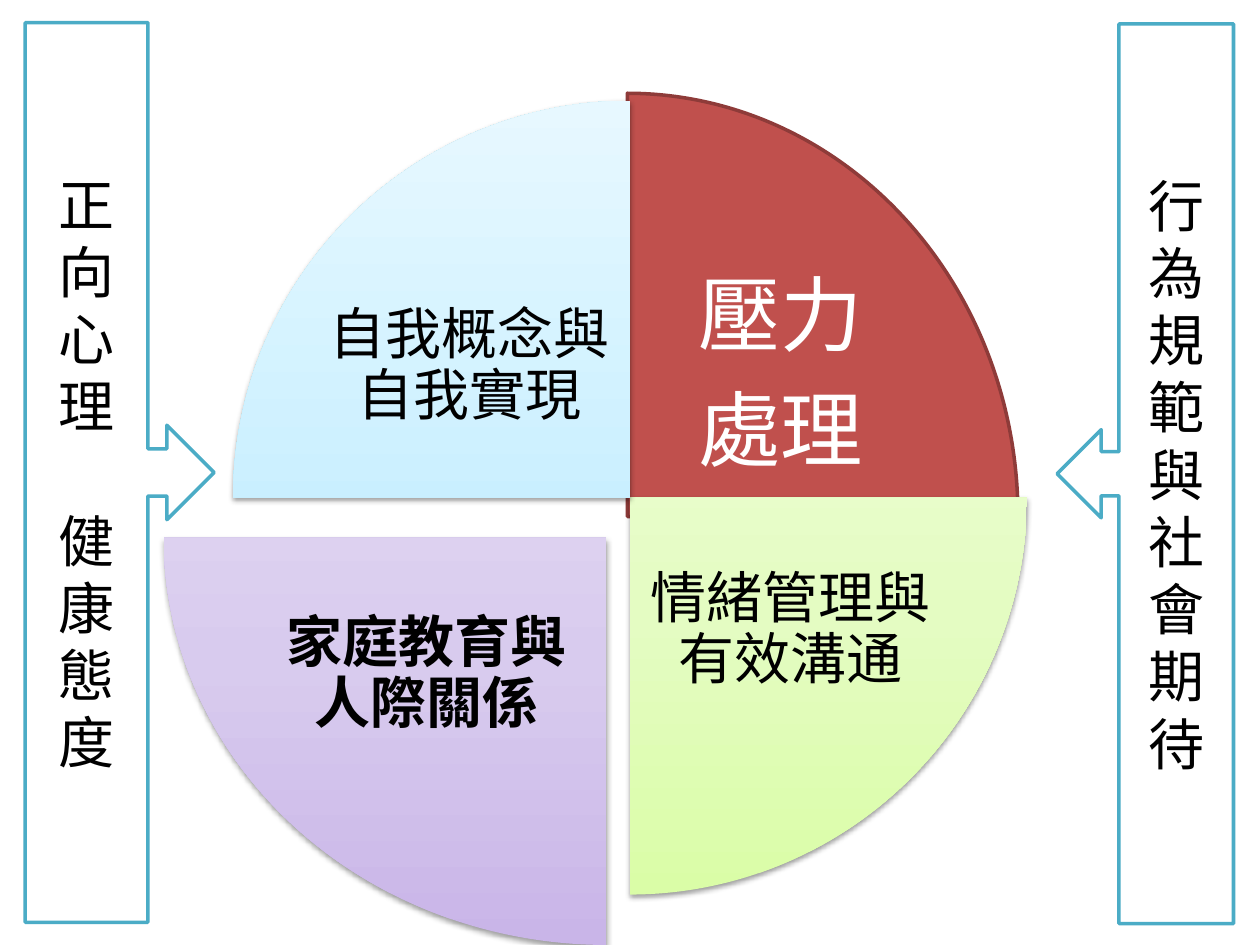
"""Build a slide with four pie quadrants between two arrow callouts."""
from lxml.etree import SubElement
from pptx import Presentation
from pptx.dml.color import RGBColor as RGB
from pptx.enum.shapes import MSO_SHAPE as SHAPE
from pptx.enum.text import MSO_ANCHOR as ANCHOR, PP_ALIGN as ALIGN
from pptx.oxml.ns import qn
from pptx.util import Inches, Pt

FONT = "Noto Sans CJK SC"
BLACK, WHITE = RGB(0, 0, 0), RGB(255, 255, 255)
RED, DARK_RED = RGB(0xC0, 0x50, 0x4D), RGB(0x8E, 0x3B, 0x39)
TEAL = RGB(0x4B, 0xAC, 0xC6)
GREENS = RGB(0xDA, 0xFD, 0xA7), RGB(0xE4, 0xFC, 0xC2), RGB(0xF5, 0xFF, 0xE7)
PURPLES = RGB(0xC9, 0xB5, 0xE8), RGB(0xD8, 0xCB, 0xEE), RGB(0xF0, 0xEA, 0xF9)
BLUES = RGB(0xA7, 0xE6, 0xFF), RGB(0xC1, 0xED, 0xFF), RGB(0xE7, 0xF8, 0xFF)

prs = Presentation()
prs.slide_width, prs.slide_height = Inches(10), Inches(7.5)
COL, ROW = prs.slide_width / 100, prs.slide_height / 75
s = prs.slides.add_slide(prs.slide_layouts[6])


def place(x, y, w, h):
    return int(x * COL), int(y * ROW), int(w * COL), int(h * ROW)


def write(tf, lines, size, pitch, color, bold=None):
    tf.word_wrap = True
    tf.vertical_anchor = ANCHOR.MIDDLE
    tf.text = "\n".join(lines)
    for p in tf.paragraphs:
        p.alignment = ALIGN.CENTER
        p.line_spacing = Pt(pitch)
        for r in p.runs:
            r.font.name, r.font.size, r.font.bold = FONT, Pt(size), bold
            r.font.color.rgb = color
            SubElement(r.font._element, qn("a:ea"), typeface=FONT)


QUADRANTS = [
    ((18.8, 7.4, 62, 67.2), (162, 0), None,
     (50.5, 19.9, 22.9, 20), ["壓力", "處理"], 47, 49, WHITE, None),
    ((18.5, 8, 63, 63), (0, 54), GREENS,
     (51.1, 40.6, 23.3, 18.8), ["情緒管理與有效溝通"], 32, 34.8, BLACK, None),
    ((13, 10.4, 70.3, 64.6), (54, 108), PURPLES,
     (20.9, 43.9, 25.9, 19.2), ["家庭教育與人際關係"], 32, 34.8, BLACK, True),
    ((18.5, 8, 63, 63), (108, 162), BLUES,
     (25.6, 19.6, 23.3, 18.8), ["自我概念與自我實現"], 32, 34.8, BLACK, None),
]

for area, angles, shades, label, lines, size, pitch, color, bold in QUADRANTS:
    sp = s.shapes.add_shape(SHAPE.PIE, *place(*area))
    sp.adjustments[0], sp.adjustments[1] = angles
    sp.shadow.inherit = False
    if shades:
        sp.line.fill.background()
        sp.fill.gradient()
        sp.fill.gradient_angle = 90
        props = sp._element.spPr
        stops = props.find(qn("a:gradFill")).find(qn("a:gsLst"))
        stops.clear()
        for share, shade in zip((0, 35, 100), shades):
            stop = SubElement(stops, qn("a:gs"), pos=str(share * 1000))
            SubElement(stop, qn("a:srgbClr"), val=str(shade))
        shadow = SubElement(props.find(qn("a:effectLst")), qn("a:outerShdw"),
                            blurRad=str(Pt(3.15)), dist=str(Pt(1.57)),
                            dir="5400000", rotWithShape="0")
        black = SubElement(shadow, qn("a:srgbClr"), val="000000")
        SubElement(black, qn("a:alpha"), val="38000")
    else:
        sp.fill.solid()
        sp.fill.fore_color.rgb = RED
        sp.line.color.rgb = DARK_RED
        sp.line.width = Pt(2)

    tf = s.shapes.add_textbox(*place(*label)).text_frame
    inset = Inches(0.07 if size > 32 else 0.04)
    tf.margin_left = tf.margin_right = tf.margin_top = tf.margin_bottom = inset
    write(tf, lines, size, pitch, color, bold)
    for p in tf.paragraphs[:-1]:
        p.space_after = Pt(0.35 * size)

CALLOUTS = [
    (SHAPE.RIGHT_ARROW_CALLOUT, (2, 1.8, 15, 71.4), "正向心理健康態度", 4),
    (SHAPE.LEFT_ARROW_CALLOUT, (83.9, 1.9, 14, 71.4), "行為規範與社會期待", None),
]

for kind, area, words, gap_at in CALLOUTS:
    sp = s.shapes.add_shape(kind, *place(*area))
    sp.shadow.inherit = False
    sp.fill.solid()
    sp.fill.fore_color.rgb = WHITE
    sp.line.color.rgb = TEAL
    sp.line.width = Pt(2)
    write(sp.text_frame, words, 32, 38.4, BLACK)
    if gap_at:
        sp.text_frame.paragraphs[gap_at].space_before = Pt(38.4)

prs.save("out.pptx")
